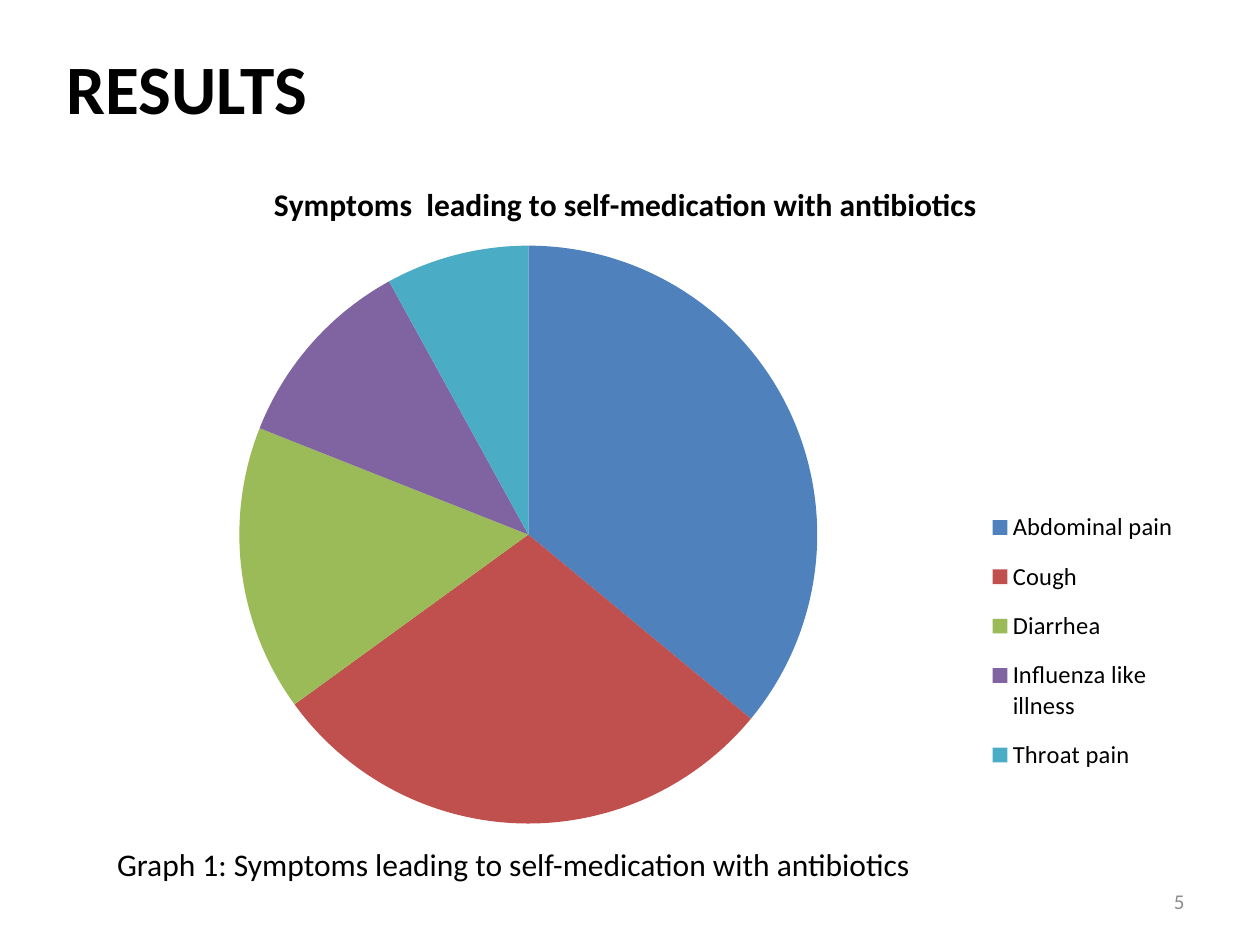
from lxml import etree
from pptx import Presentation
from pptx import util as u
from pptx.chart import data
from pptx.dml import color
from pptx.enum import chart as ch, text
from pptx.oxml import ns

THEME = {
    "font": "Calibri",
    "ink": color.RGBColor.from_string("000000"),
    "muted": color.RGBColor.from_string("8C8C8C"),
    "slices": ["4F81BD", "C0504D", "9BBB59", "8064A2", "4BACC6"],
    "title": 39.6, "heading": 18, "caption": 18, "legend": 14, "number": 12, "chart": 10,
}


def style(font, size, ink="ink", bold=False):
    values = {"name": THEME["font"], "size": u.Pt(THEME[size]), "bold": bold}
    for key, value in values.items():
        setattr(font, key, value)
    font.color.rgb = THEME[ink]


def set_layout(parent, before, **box):
    """Place a chart part by fractions of the chart area."""
    old = parent.find(ns.qn("c:layout"))
    if old is not None:
        parent.remove(old)
    layout = etree.Element(ns.qn("c:layout"))
    manual = etree.SubElement(layout, ns.qn("c:manualLayout"))
    if before is None:
        etree.SubElement(manual, ns.qn("c:layoutTarget")).set("val", "inner")
        parent.insert(0, layout)
    else:
        parent.find(ns.qn(before)).addprevious(layout)
    for tag in ("xMode", "yMode"):
        etree.SubElement(manual, ns.qn("c:" + tag)).set("val", "edge")
    for tag, value in box.items():
        etree.SubElement(manual, ns.qn("c:" + tag)).set("val", str(value))


prs = Presentation()
prs.slide_width, prs.slide_height = u.Cm(25.4), u.Cm(19.05)
s = prs.slides.add_slide(prs.slide_layouts[5])
left, width = u.Cm(1.09), u.Cm(23.04)

# Title
sp = s.shapes.title
place = {"left": left, "top": u.Cm(0.76), "width": width, "height": u.Cm(1.96)}
for key, value in place.items():
    setattr(sp, key, value)
tf = sp.text_frame
tf.text = "RESULTS"
tf.vertical_anchor = text.MSO_ANCHOR.MIDDLE
p = tf.paragraphs[0]
p.alignment = text.PP_ALIGN.LEFT
style(p.runs[0].font, "title", bold=True)

# Pie chart
cd = data.CategoryChartData()
cd.categories = ["Abdominal pain", "Cough", "Diarrhea", "Influenza like illness", "Throat pain"]
cd.add_series("Series 1", (36, 29, 16, 11, 8))
chart = s.shapes.add_chart(ch.XL_CHART_TYPE.PIE, left, u.Cm(3.15),
                           width, u.Cm(13.87), cd).chart
style(chart.font, "chart")
plot = chart.plots[0]
plot.vary_by_categories = True
for i, rgb in enumerate(THEME["slices"]):
    fill = plot.series[0].points[i].format.fill
    fill.solid()
    fill.fore_color.rgb = color.RGBColor.from_string(rgb)

# Chart heading, legend and plot area
chart.has_title = True
tf = chart.chart_title.text_frame
tf.text = "Symptoms  leading to self-medication with antibiotics"
style(tf.paragraphs[0].runs[0].font, "heading", bold=True)
chart.chart_title.include_in_layout = False
chart.has_legend = True
legend = chart.legend
legend.position = ch.XL_LEGEND_POSITION.RIGHT
legend.include_in_layout = False
style(legend.font, "legend")
set_layout(legend._element, "c:overlay", x=0.81, y=0.49, w=0.18, h=0.43)
plot_area = chart._chartSpace.find(".//" + ns.qn("c:plotArea"))
set_layout(plot_area, None, x=0.16, y=0.13, w=0.51, h=0.84)

# Caption and slide number
notes = [
    ("Graph 1: Symptoms leading to self-medication with antibiotics", 2.11, 16.92, 17.6,
     "caption", "ink", text.PP_ALIGN.LEFT, text.MSO_ANCHOR.TOP),
    ("5", 18.21, 17.65, 5.92, "number", "muted", text.PP_ALIGN.RIGHT, text.MSO_ANCHOR.MIDDLE),
]
for words, x, y, w, size, ink, align, anchor in notes:
    sp = s.shapes.add_textbox(u.Cm(x), u.Cm(y), u.Cm(w), u.Cm(1.02))
    tf = sp.text_frame
    tf.word_wrap = True
    tf.vertical_anchor = anchor
    p = tf.paragraphs[0]
    p.alignment = align
    r = p.add_run()
    r.text = words
    style(r.font, size, ink)

prs.save("out.pptx")
